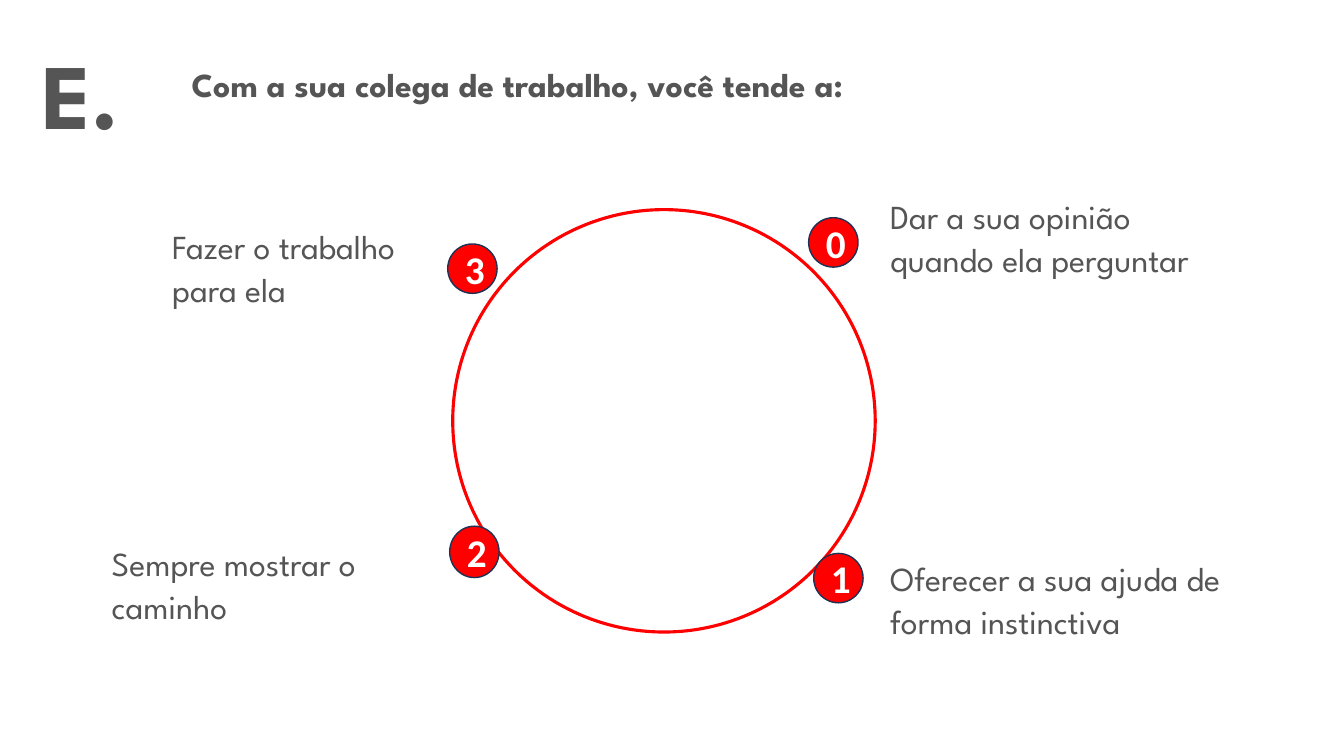
from pptx import Presentation
from pptx.dml.color import RGBColor
from pptx.enum.shapes import MSO_SHAPE
from pptx.enum.text import MSO_ANCHOR, MSO_AUTO_SIZE, PP_ALIGN
from pptx.util import Inches, Pt

OVAL, RECTANGLE = MSO_SHAPE.OVAL, MSO_SHAPE.RECTANGLE
TOP, MIDDLE = MSO_ANCHOR.TOP, MSO_ANCHOR.MIDDLE
LEFT, CENTER = PP_ALIGN.LEFT, PP_ALIGN.CENTER
GROW, FIXED = MSO_AUTO_SIZE.SHAPE_TO_FIT_TEXT, MSO_AUTO_SIZE.NONE

GRAY, RED, NAVY, WHITE = "555555", "FF0000", "1E3256", "FFFFFF"
SPARTAN = "League Spartan"

FRAME = {"word_wrap": True, "vertical_anchor": TOP, "auto_size": GROW}
BADGE_FRAME = {"word_wrap": True, "vertical_anchor": MIDDLE, "auto_size": FIXED}
SENTENCE = {"alignment": LEFT, "line_spacing": 1.07, "space_after": Pt(8)}
HEADING_FONT = {"name": SPARTAN, "size": Pt(24), "bold": True}
ANSWER_FONT = {"name": SPARTAN, "size": Pt(24), "bold": False}
LETTER_FONT = {"name": SPARTAN, "size": Pt(66), "bold": True}
SCORE_FONT = {"name": "Calibri", "size": Pt(28), "bold": True}


def color(hex_value):
    return RGBColor.from_string(hex_value)


def write(shape, text, frame_format, paragraph_format, font_format, font_color):
    frame = shape.text_frame
    frame.text = text
    paragraph = frame.paragraphs[0]
    font = paragraph.runs[0].font
    for target, values in (
        (frame, frame_format),
        (paragraph, paragraph_format),
        (font, font_format),
    ):
        for key, value in values.items():
            setattr(target, key, value)
    font.color.rgb = color(font_color)


prs = Presentation()
prs.slide_width = Inches(13.33)
prs.slide_height = Inches(7.5)
slide = prs.slides.add_slide(prs.slide_layouts[5])
shapes = slide.shapes

question = shapes.title
question.left, question.top = Inches(1.8), Inches(0.56)
question.width, question.height = Inches(9.47), Inches(0.53)
write(question, "Com a sua colega de trabalho, você tende a:",
      FRAME, SENTENCE, HEADING_FONT, GRAY)

question_letter = shapes.add_textbox(Inches(0.32), Inches(0.32), Inches(1.29), Inches(1.21))
write(question_letter, "E.", FRAME, {"alignment": LEFT}, LETTER_FONT, GRAY)

answers = [
    ("Dar a sua opinião quando ela perguntar", 8.73, 1.87, 3.51),
    ("Oferecer a sua ajuda de forma instinctiva", 8.73, 5.46, 3.73),
    ("Sempre mostrar o caminho", 1.01, 5.31, 3.3),
    ("Fazer o trabalho para ela", 1.61, 2.16, 2.9),
]
for text, left, top, width in answers:
    answer = shapes.add_shape(RECTANGLE, Inches(left), Inches(top), Inches(width), Inches(0.96))
    answer.shadow.inherit = False
    answer.fill.solid()
    answer.fill.fore_color.rgb = color(WHITE)
    answer.line.fill.background()
    write(answer, text, FRAME, SENTENCE, ANSWER_FONT, GRAY)

ring = shapes.add_shape(OVAL, Inches(4.49), Inches(2.08), Inches(4.19), Inches(4.19))
ring.shadow.inherit = False
ring.fill.background()
ring.line.color.rgb = color(RED)
ring.line.width = Pt(2.25)

badges = [(8.02, 2.16, 0.49), (8.07, 5.49, 0.49), (4.46, 5.22, 0.51), (4.44, 2.42, 0.49)]
for score, (left, top, height) in enumerate(badges):
    badge = shapes.add_shape(OVAL, Inches(left), Inches(top), Inches(0.49), Inches(height))
    badge.shadow.inherit = False
    badge.fill.solid()
    badge.fill.fore_color.rgb = color(RED)
    badge.line.color.rgb = color(NAVY)
    badge.line.width = Pt(1)
    write(badge, str(score), BADGE_FRAME, {"alignment": CENTER}, SCORE_FONT, WHITE)

prs.save("out.pptx")
